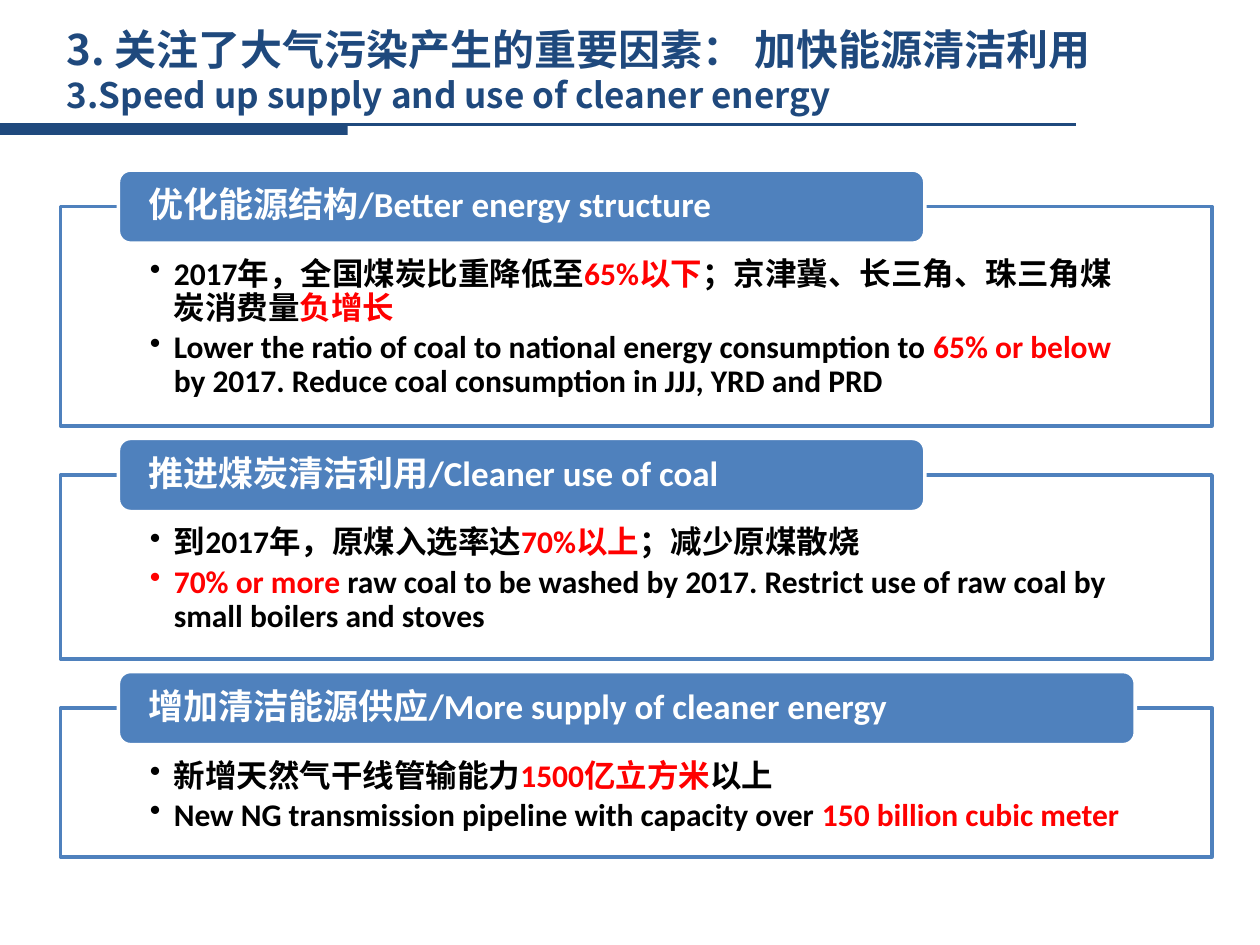
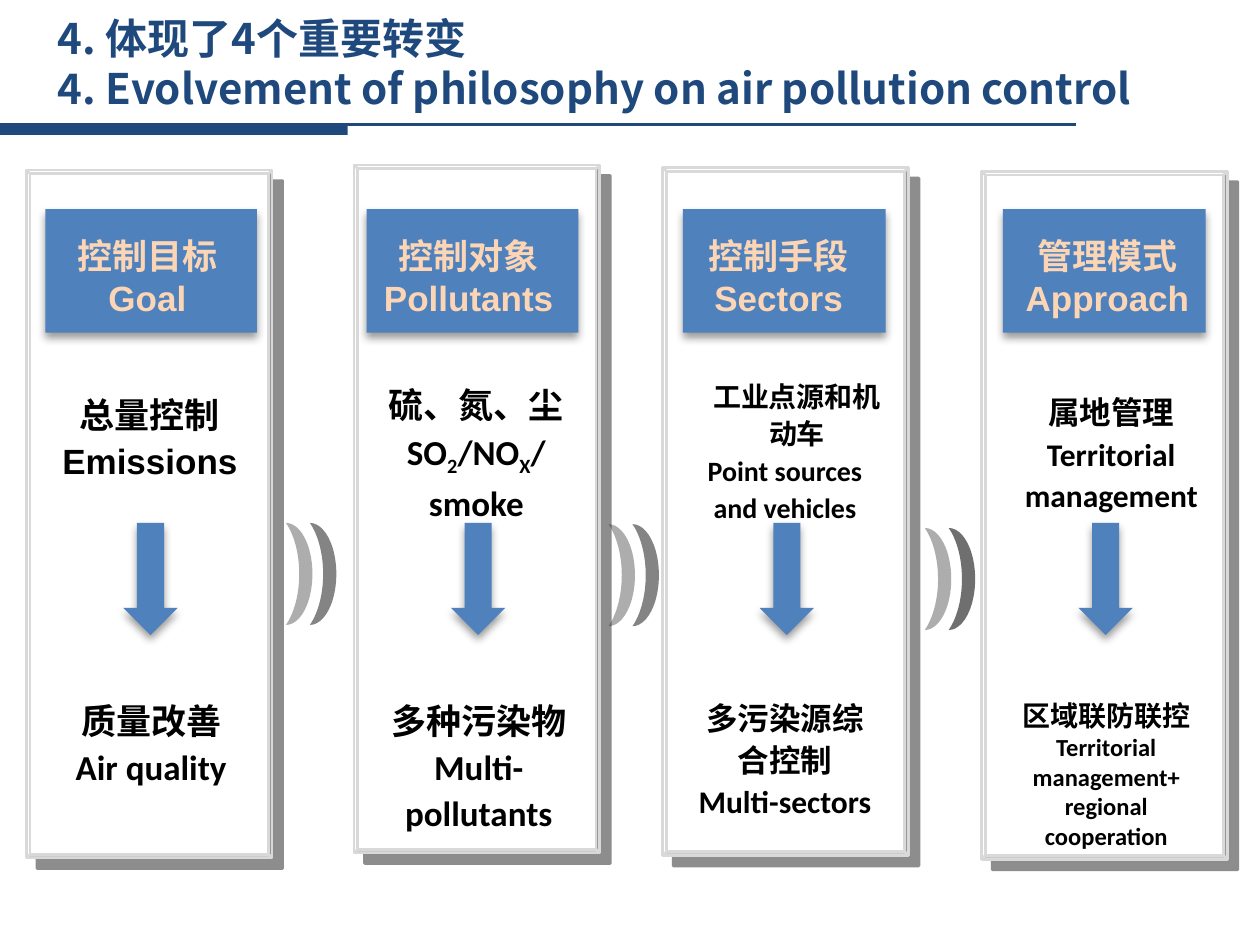
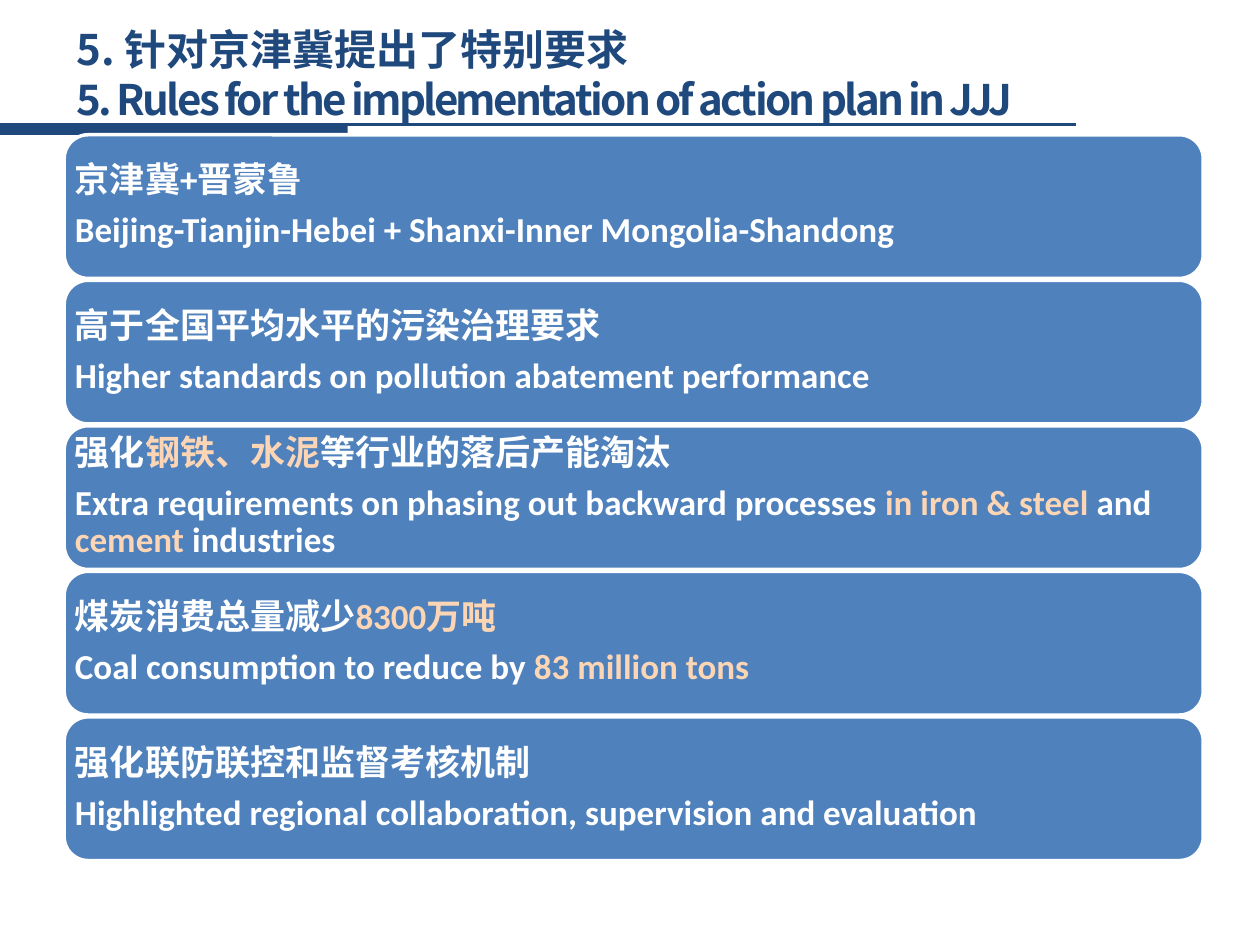
from collections import namedtuple
from dataclasses import dataclass, field

from lxml import etree
from pptx import Presentation
from pptx.dml.color import RGBColor
from pptx.enum.shapes import MSO_CONNECTOR, MSO_SHAPE
from pptx.enum.text import MSO_ANCHOR, PP_ALIGN
from pptx.oxml.ns import qn
from pptx.util import Inches, Pt

RECT, ROUND = MSO_SHAPE.RECTANGLE, MSO_SHAPE.ROUNDED_RECTANGLE
BEVEL, MOON, DOWN_ARROW = MSO_SHAPE.BEVEL, MSO_SHAPE.MOON, MSO_SHAPE.DOWN_ARROW
STRAIGHT = MSO_CONNECTOR.STRAIGHT
TOP, MIDDLE = MSO_ANCHOR.TOP, MSO_ANCHOR.MIDDLE
LEFT, CENTER = PP_ALIGN.LEFT, PP_ALIGN.CENTER

COLORS = {
    "navy": "1F497D", "blue": "4F81BD", "white": "FFFFFF", "black": "000000",
    "red": "FF0000", "peach": "FCD5B5", "silver": "D9D9D9", "gray": "333333",
    "charcoal": "1C1C1C",
}
CJK_FONT = "Noto Sans CJK SC"
TITLE_FONT = {"name": CJK_FONT, "size": 24, "color": "navy"}
BODY_FONT = {"name": "Calibri", "size": 18, "color": "black"}
HEADING_FONT = {"name": "Calibri", "size": 20, "color": "white"}
LABEL_FONT = {"name": "Calibri", "size": 20, "color": "peach"}
ARIAL = {"name": "Arial"}
RED, PEACH = {"color": "red"}, {"color": "peach"}
SUBSCRIPT = {"xml": {"baseline": "-25000"}}
BULLETED = {"line_spacing": 0.9, "space_after": Pt(3), "bullet": 0.19}
HEADING = {"line_spacing": 0.9, "space_after": Pt(7)}
CENTERED = {"alignment": CENTER, "line_spacing": 1.1}
DEFAULT_MARGINS = (0.1, 0.05, 0.1, 0.05)
PANEL_SHADOW = {"color": "charcoal", "alpha": 50, "blur": 0, "distance": 8.5, "angle": 45}
SOFT_SHADOW = {"color": "black", "alpha": 40, "blur": 5, "distance": 3, "angle": 90}


@dataclass
class Line:
    """A paragraph whose layout differs from the rest of its box."""
    spans: list
    layout: dict = field(default_factory=dict)


def rgb(color):
    return RGBColor.from_string(COLORS[color])


def set_alpha(parent, percent):
    """Make every RGB colour below parent partly transparent."""
    for color in parent.iter(qn("a:srgbClr")):
        etree.SubElement(color, qn("a:alpha"), val=str(percent * 1000))


class SlideMaker:
    def __init__(self, deck):
        self.deck = deck
        self.slide = None

    def new_slide(self, lines, left, top, width, height):
        """Start a slide with the shared rule, band and title."""
        self.slide = self.deck.slides.add_slide(self.deck.slide_layouts[6])
        self.rule(0, 0.99, 8.54)
        self.shape(RECT, 0, 0.99, 2.76, 0.08, "navy")
        self.text(left, top, width, height, lines, TITLE_FONT, anchor=MIDDLE)

    def rule(self, left, top, right):
        rule = self.slide.shapes.add_connector(
            STRAIGHT, Inches(left), Inches(top), Inches(right), Inches(top))
        rule.line.color.rgb = rgb("navy")
        rule.line.width = Pt(1.5)
        etree.SubElement(rule._element.spPr, qn("a:effectLst"))

    def shape(self, kind, left, top, width, height, fill, line=None,
              line_width=2, alpha=None, adjustments=(), shadow=None):
        shape = self.slide.shapes.add_shape(
            kind, Inches(left), Inches(top), Inches(width), Inches(height))
        for index, value in enumerate(adjustments):
            shape.adjustments[index] = value
        shape.fill.solid()
        shape.fill.fore_color.rgb = rgb(fill)
        if alpha:
            set_alpha(shape._element.spPr, alpha)
        if line:
            shape.line.color.rgb = rgb(line)
            shape.line.width = Pt(line_width)
        else:
            shape.line.fill.background()
        shape.shadow.inherit = False
        if shadow:
            self.shadow(shape, **shadow)
        return shape

    def shadow(self, shape, color, alpha, blur, distance, angle):
        effects = shape._element.spPr.find(qn("a:effectLst"))
        outer = etree.SubElement(
            effects, qn("a:outerShdw"), blurRad=str(Pt(blur)),
            dist=str(Pt(distance)), dir=str(angle * 60000), algn="tl", rotWithShape="0")
        etree.SubElement(outer, qn("a:srgbClr"), val=COLORS[color])
        set_alpha(outer, alpha)

    def moon(self, left, top, alpha):
        moon = self.shape(MOON, left, top, 0.21, 0.81, "gray", alpha=alpha,
                          adjustments=[0.5])
        moon._element.spPr.find(qn("a:xfrm")).set("flipH", "1")

    def text(self, left, top, width, height, lines, font, **options):
        box = self.slide.shapes.add_textbox(
            Inches(left), Inches(top), Inches(width), Inches(height))
        self.fill_text(box, lines, font, **options)

    def fill_text(self, box, lines, font, layout=None, anchor=TOP,
                  margins=DEFAULT_MARGINS, wrap=True):
        frame = box.text_frame
        frame.word_wrap = wrap
        frame.vertical_anchor = anchor
        for side, margin in zip(("left", "top", "right", "bottom"), margins):
            setattr(frame, f"margin_{side}", Inches(margin))
        for index, line in enumerate(lines):
            if not isinstance(line, Line):
                line = Line(line)
            para = frame.add_paragraph() if index else frame.paragraphs[0]
            self.lay_out(para, {"alignment": LEFT, **(layout or {}), **line.layout})
            spans = [line.spans] if isinstance(line.spans, str) else line.spans
            for span in spans:
                content, changes = (span, {}) if isinstance(span, str) else span
                self.add_span(para, content, {**font, **changes})

    def lay_out(self, para, layout):
        properties = para._p.get_or_add_pPr()
        for name, value in layout.items():
            if name == "bullet":
                properties.set("marL", str(Inches(value)))
                properties.set("indent", str(-Inches(value)))
                etree.SubElement(properties, qn("a:buChar"), char="•")
            elif name == "indent":
                properties.set("marL", str(Inches(value)))
            else:
                setattr(para, name, value)

    def add_span(self, para, content, style):
        span = para.add_run()
        span.text = content
        values = {"name": style["name"], "size": Pt(style["size"]), "bold": True}
        for name, value in values.items():
            setattr(span.font, name, value)
        span.font.color.rgb = rgb(style["color"])
        properties = span._r.get_or_add_rPr()
        etree.SubElement(properties, qn("a:ea"), typeface=CJK_FONT)
        for name, value in style.get("xml", {}).items():
            properties.set(name, value)


def energy_slide(maker):
    maker.new_slide(
        ["3. 关注了大气污染产生的重要因素： 加快能源清洁利用",
         [("3.Speed up supply and use of cleaner energy", {"size": 20})]],
        0.43, 0.13, 8.5, 0.84)
    cards = [
        ("优化能源结构/Better energy structure", 6.4, 1.74, [
            ["2017年，全国煤炭比重降低至", ("65%以下", RED),
             "；京津冀、长三角、珠三角煤炭消费量", ("负增长", RED)],
            ["Lower the ratio of coal to national energy consumption to ",
             ("65% or below ", RED),
             "by 2017. Reduce coal consumption in JJJ, YRD and PRD"]]),
        ("推进煤炭清洁利用/Cleaner use of coal", 6.4, 1.46, [
            ["到2017年，原煤入选率达", ("70%以上", RED), "；减少原煤散烧"],
            [("70% or more ", RED),
             "raw coal to be washed by 2017. Restrict use of raw coal by "
             "small boilers and stoves"]]),
        ("增加清洁能源供应/More supply of cleaner energy", 8.07, 1.18, [
            ["新增天然气干线管输能力", ("1500亿立方米", RED), "以上"],
            ["New NG transmission pipeline with capacity over ",
             ("150 billion cubic meter", RED)]]),
    ]
    top, gap = 1.64, 0.39
    for heading, heading_width, height, lines in cards:
        card = maker.shape(RECT, 0.48, top, 9.14, height, "white", "blue", alpha=90)
        maker.fill_text(card, lines, BODY_FONT, BULLETED, margins=(0.71, 0.41, 0.71, 0.14))
        tab = maker.shape(ROUND, 0.94, top - 0.29, heading_width, 0.58, "blue", "white")
        maker.fill_text(tab, [heading], HEADING_FONT, HEADING, MIDDLE, (0.21, 0, 0.21, 0))
        top += height + gap


Column = namedtuple(
    "Column", "left top header_left header_width label_center label "
              "before_left before_top before before_size after_left after after_size")


def evolvement_slide(maker):
    maker.new_slide(
        ["4. 体现了4个重要转变", "4. Evolvement of philosophy on air pollution control"],
        0.36, 0.04, 9.12, 0.91)
    columns = [
        Column(0.21, 1.35, 0.36, 1.68, 1.17, [[("控制目标", ARIAL)], [("Goal", ARIAL)]],
               0.28, 3.04, ["总量控制", [("Emissions", ARIAL)]], 20,
               0.36, ["质量改善", "Air quality"], 20),
        Column(2.81, 1.31, 2.91, 1.68, 3.72, ["控制对象", [("Pollutants", ARIAL)]],
               2.87, 2.96,
               ["硫、氮、尘",
                ["SO", ("2", SUBSCRIPT), "/NO", ("X", SUBSCRIPT), "/"], "smoke"], 20,
               2.96, ["多种污染物", "Multi-pollutants"], 20),
        Column(5.26, 1.33, 5.42, 1.61, 6.18, ["控制手段", [("Sectors", ARIAL)]],
               5.32, 2.94,
               [Line("工业点源和机动车", {"indent": 0.19}), "Point sources and vehicles"], 16,
               5.39, ["多污染源综合控制", "Multi-sectors"], 18),
        Column(7.79, 1.36, 7.96, 1.61, 8.79, ["管理模式", [("Approach", ARIAL)]],
               7.91, 3.04, ["属地管理", "Territorial management"], 18,
               7.94,
               ["区域联防联控",
                Line([("Territorial management+ regional cooperation", {"size": 14})],
                     {"line_spacing": 1.0})], 16),
    ]
    label_width = 1.56
    for column in columns:
        maker.shape(BEVEL, column.left, column.top, 1.95, 5.46, "white", "silver", 1.5,
                    adjustments=[0.015], shadow=PANEL_SHADOW)
        maker.shape(RECT, column.header_left, 1.66, column.header_width, 0.98, "blue",
                    shadow=SOFT_SHADOW)
        maker.text(column.label_center - label_width / 2, 1.81, label_width, 0.77,
                   column.label, LABEL_FONT, layout={"alignment": CENTER}, wrap=False)
        maker.text(column.before_left, column.before_top, 1.82, 1.5, column.before,
                   {**BODY_FONT, "size": column.before_size}, layout=CENTERED)
        maker.shape(DOWN_ARROW, column.left + 0.77, 4.15, 0.43, 0.89, "blue",
                    adjustments=[0.5, 0.5], shadow=SOFT_SHADOW)
        maker.text(column.after_left, 5.47, 1.68, 1.3, column.after,
                   {**BODY_FONT, "size": column.after_size}, layout=CENTERED)
    for left, top, dark_alpha in [(2.27, 4.15, 60), (4.83, 4.16, 60), (7.34, 4.19, 70)]:
        maker.moon(left, top, 40)
        maker.moon(left + 0.19, top, dark_alpha)


def rules_slide(maker):
    maker.new_slide(
        ["5. 针对京津冀提出了特别要求",
         [("5. Rules for the implementation of action plan in JJJ",
           {"xml": {"spc": "-150"}})]],
        0.51, 0.13, 8.5, 0.91)
    rules = [
        ["京津冀+晋蒙鲁", "Beijing-Tianjin-Hebei + Shanxi-Inner Mongolia-Shandong"],
        ["高于全国平均水平的污染治理要求",
         "Higher standards on pollution abatement performance"],
        [["强化", ("钢铁、水泥", PEACH), "等行业的落后产能淘汰"],
         ["Extra requirements on phasing out backward processes ",
          ("in iron & steel ", PEACH), "and ", ("cement", PEACH), " industries"]],
        [["煤炭消费总量减少", ("8300万吨", PEACH)],
         ["Coal consumption to reduce by ", ("83 million tons", PEACH)]],
        ["强化联防联控和监督考核机制",
         "Highlighted regional collaboration, supervision and evaluation"],
    ]
    first_top, last_top = 1.07, 5.69
    step = (last_top - first_top) / (len(rules) - 1)
    for index, lines in enumerate(rules):
        bar = maker.shape(ROUND, 0.51, first_top + index * step, 9.04, 1.14, "blue", "white")
        maker.fill_text(bar, lines, HEADING_FONT, HEADING, MIDDLE, (0.03, 0.03, 0.03, 0.03))


def main():
    deck = Presentation()
    deck.slide_width, deck.slide_height = Inches(10), Inches(7.5)
    maker = SlideMaker(deck)
    energy_slide(maker)
    evolvement_slide(maker)
    rules_slide(maker)
    deck.save("out.pptx")


if __name__ == "__main__":
    main()
